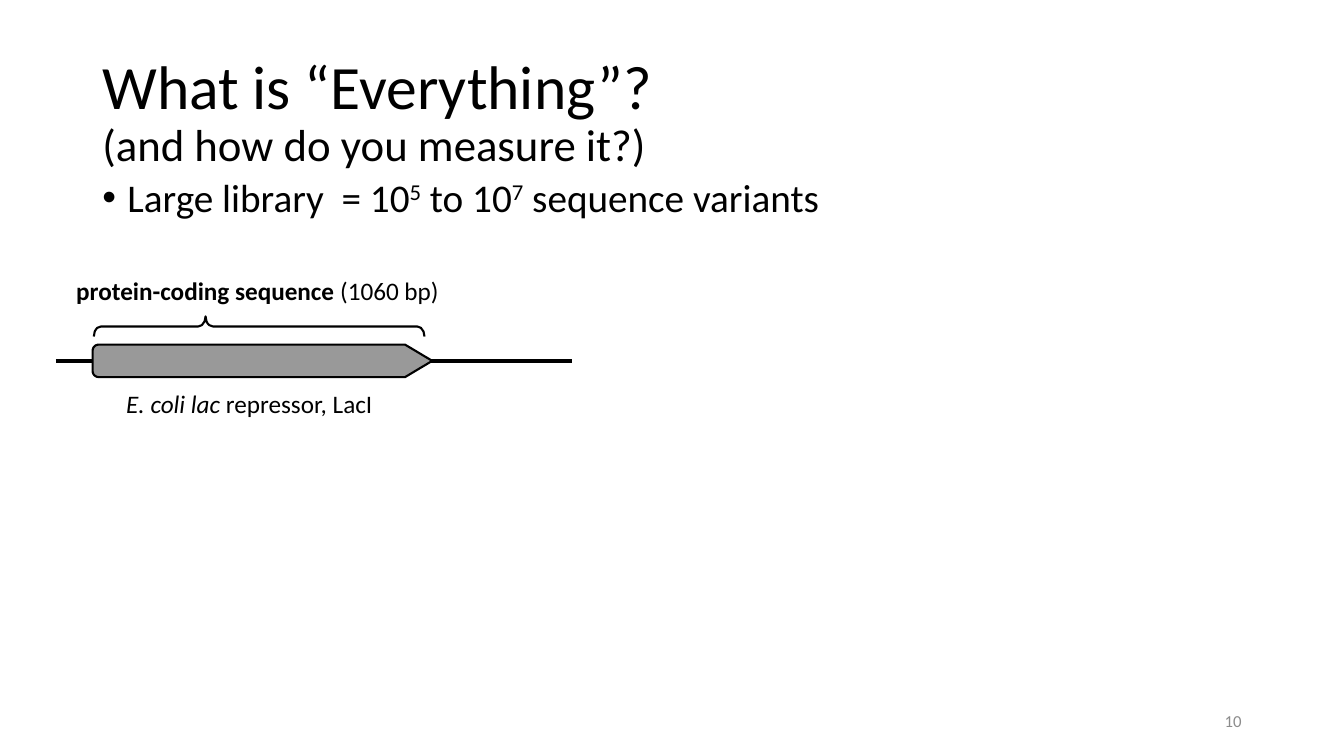
from math import cos, radians, sin

from lxml.etree import SubElement
from pptx import Presentation
from pptx.dml.color import RGBColor
from pptx.enum.shapes import MSO_CONNECTOR, MSO_SHAPE
from pptx.enum.text import MSO_ANCHOR, PP_ALIGN
from pptx.oxml.ns import qn
from pptx.util import Pt


def color(value):
    return RGBColor.from_string(value)


class SlideBuilder:
    font_name = "Calibri"
    ink = "000000"

    def __init__(self, page):
        self.page = page

    def text(self, left, top, width, height, lines, anchor=MSO_ANCHOR.TOP,
             wrap=True, bullet_indent=0, **paragraph_format):
        box = self.page.shapes.add_textbox(Pt(left), Pt(top), Pt(width), Pt(height))
        frame = box.text_frame
        frame.word_wrap = wrap
        frame.vertical_anchor = anchor
        para = frame.paragraphs[0]
        for name, value in paragraph_format.items():
            setattr(para, name, value)
        if bullet_indent:
            self.bullet(para, bullet_indent)
        for index, spans in enumerate(lines):
            if index:
                para.add_line_break()
            for words, formats in spans:
                self.span(para, words, formats)

    def bullet(self, para, indent):
        properties = para._p.get_or_add_pPr()
        properties.set("marL", str(Pt(indent)))
        properties.set("indent", str(-Pt(indent)))
        SubElement(properties, qn("a:buFont")).set("typeface", "Arial")
        SubElement(properties, qn("a:buChar")).set("char", "•")

    def span(self, para, words, formats):
        span = para.add_run()
        span.text = words
        settings = {"name": self.font_name, **formats}
        shade = settings.pop("color", self.ink)
        baseline = settings.pop("baseline", 0)
        for name, value in settings.items():
            setattr(span.font, name, value)
        span.font.color.rgb = color(shade)
        if baseline:
            span._r.get_or_add_rPr().set("baseline", str(baseline * 1000))

    def outline(self, shape, weight):
        shape.line.color.rgb = color(self.ink)
        shape.line.width = Pt(weight)

    def line(self, left, top, right, bottom, weight):
        line = self.page.shapes.add_connector(
            MSO_CONNECTOR.STRAIGHT, Pt(left), Pt(top), Pt(right), Pt(bottom))
        self.outline(line, weight)
        SubElement(line._element.spPr, qn("a:effectLst"))

    def brace_above(self, left, top, width, height, depth, tip):
        brace = self.page.shapes.add_shape(
            MSO_SHAPE.LEFT_BRACE, Pt(left + (width - height) / 2),
            Pt(top + (height - width) / 2), Pt(height), Pt(width))
        brace.rotation = 90
        brace.adjustments[0] = depth
        brace.adjustments[1] = tip
        brace.shadow.inherit = False
        brace.fill.background()
        self.outline(brace, 1.5)

    def gene_arrow(self, left, top, width, height, head, radius, fill):
        right, bottom = left + width, top + height
        shoulder = right - head
        points = [(shoulder, top), (right, top + height / 2), (shoulder, bottom)]
        for center_y, start in ((bottom - radius, 90), (top + radius, 180)):
            for angle in range(start, start + 91, 15):
                points.append((left + radius + radius * cos(radians(angle)),
                               center_y + radius * sin(radians(angle))))
        pen = self.page.shapes.build_freeform(
            Pt(points[0][0]), Pt(points[0][1]), scale=1.0)
        pen.add_line_segments([(Pt(x), Pt(y)) for x, y in points[1:]], close=True)
        arrow = pen.convert_to_shape()
        arrow.shadow.inherit = False
        arrow.fill.solid()
        arrow.fill.fore_color.rgb = color(fill)
        self.outline(arrow, 1.5)


def main():
    deck = Presentation()
    deck.slide_width, deck.slide_height = Pt(960), Pt(540)
    builder = SlideBuilder(deck.slides.add_slide(deck.slide_layouts[6]))

    body = {"size": Pt(28)}
    power = {**body, "baseline": 30}
    label = {"size": Pt(18)}

    builder.text(66, 28.8, 828, 104.4, [
        [("What is “Everything”?", {"size": Pt(44)})],
        [("(and how do you measure it?)", {"size": Pt(32)})],
    ], anchor=MSO_ANCHOR.MIDDLE, line_spacing=0.9)
    builder.text(66, 123.8, 828, 41.8, [[
        ("Large library  = 10", body), ("5", power), (" to 10", body),
        ("7", power), (" sequence variants", body),
    ]], bullet_indent=18, line_spacing=0.9)
    builder.text(678, 500.5, 216, 28.8, [[("10", {"size": Pt(12), "color": "8C8C8C"})]],
                 anchor=MSO_ANCHOR.MIDDLE, alignment=PP_ALIGN.RIGHT)

    builder.brace_above(67, 226, 236.2, 14.4, depth=0.36, tip=0.662)
    builder.text(46, 193, 275.8, 29, [[
        ("protein-coding sequence ", {**label, "bold": True}), ("(1060 bp)", label),
    ]], wrap=False, alignment=PP_ALIGN.CENTER)
    builder.text(82, 273.5, 192.2, 29, [[
        ("E. coli lac", {**label, "italic": True}), (" repressor, LacI", label),
    ]], wrap=False, alignment=PP_ALIGN.CENTER)

    builder.line(40, 257.8, 408.6, 257.8, weight=3)
    builder.gene_arrow(66.2, 246.2, 242.6, 23.2, head=19.4, radius=4.3, fill="999999")

    deck.save("out.pptx")


if __name__ == "__main__":
    main()
